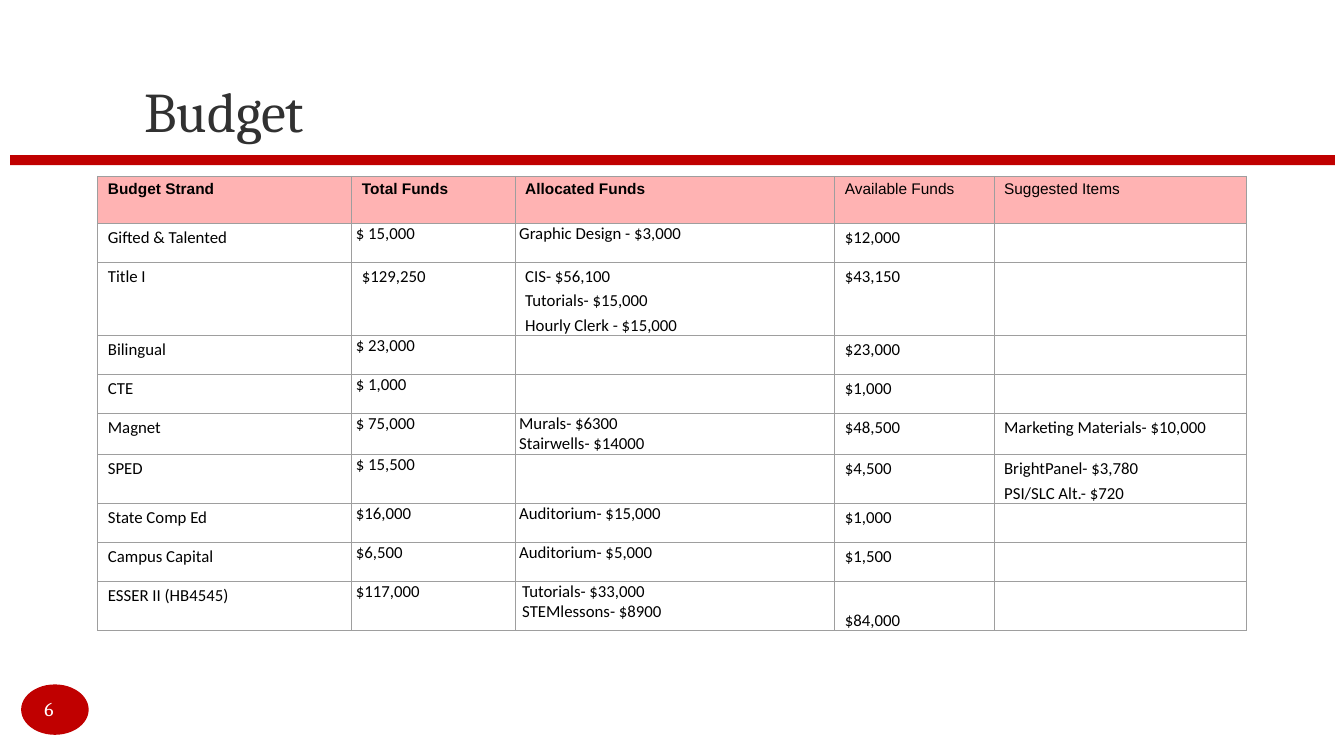
from lxml import etree
from pptx import Presentation
from pptx.dml.color import RGBColor
from pptx.enum.shapes import MSO_SHAPE
from pptx.oxml.ns import qn
from pptx.util import Inches, Pt

RECTANGLE = MSO_SHAPE.RECTANGLE
OVAL = MSO_SHAPE.OVAL

RED = RGBColor(0xC0, 0x00, 0x00)
PINK = RGBColor(0xFF, 0xB3, 0xB3)
WHITE = RGBColor(0xFF, 0xFF, 0xFF)
BLACK = RGBColor(0x00, 0x00, 0x00)
CHARCOAL = RGBColor(0x31, 0x31, 0x31)
GRID_GREY = RGBColor(0x9E, 0x9E, 0x9E)

COLUMN_WIDTHS = [2.52, 1.62, 3.17, 1.58, 2.5]
ROW_HEIGHTS = [0.47, 0.38, 0.73, 0.39, 0.38, 0.41, 0.49, 0.38, 0.39, 0.49]
HEADERS = ["Budget Strand", "Total Funds", "Allocated Funds",
           "Available Funds", "Suggested Items"]
BOLD_HEADERS = 3
BUDGET = [
    ["Gifted & Talented", "$ 15,000", "Graphic Design - $3,000", "$12,000", ""],
    ["Title I", "$129,250",
     "CIS- $56,100\nTutorials- $15,000\nHourly Clerk - $15,000", "$43,150", ""],
    ["Bilingual", "$ 23,000", "", "$23,000", ""],
    ["CTE", "$ 1,000", "", "$1,000", ""],
    ["Magnet", "$ 75,000", "Murals- $6300\nStairwells- $14000", "$48,500",
     "Marketing Materials- $10,000"],
    ["SPED", "$ 15,500", "", "$4,500", "BrightPanel- $3,780\nPSI/SLC Alt.- $720"],
    ["State Comp Ed", "$16,000", "Auditorium- $15,000", "$1,000", ""],
    ["Campus Capital", "$6,500", "Auditorium- $5,000", "$1,500", ""],
    ["ESSER II (HB4545)", "$117,000",
     "Tutorials- $33,000\nSTEMlessons- $8900", "$84,000", ""],
]

# Left and top cell margins
PADDED = (0.1, 0.04)
TIGHT = (0.04, 0)
TIGHT_COLUMNS = (1, 2)
PADDED_ROW = 2
LAST_ROW = len(BUDGET)
SPECIAL_MARGINS = {(LAST_ROW, 2): (0.07, 0), (LAST_ROW, 3): (0.1, 0.29)}


def write_text(frame, text, font, size, color, bold=False, gap=0):
    """Write one paragraph per line, with a gap in points between them."""
    for index, line in enumerate(text.split("\n")):
        para = frame.paragraphs[0] if index == 0 else frame.add_paragraph()
        if index:
            para.space_before = Pt(gap)
        span = para.add_run()
        span.text = line
        span.font.name = font
        span.font.size = Pt(size)
        span.font.bold = bold
        span.font.color.rgb = color


def add_block(page, kind, left, top, width, height):
    block = page.shapes.add_shape(kind, Inches(left), Inches(top),
                                  Inches(width), Inches(height))
    block.shadow.inherit = False
    block.fill.solid()
    block.fill.fore_color.rgb = RED
    block.line.fill.background()


def add_label(page, left, top, width, height, text, **text_format):
    box = page.shapes.add_textbox(Inches(left), Inches(top),
                                  Inches(width), Inches(height))
    frame = box.text_frame
    frame.word_wrap = True
    frame.margin_left = frame.margin_right = 0
    frame.margin_top = frame.margin_bottom = 0
    write_text(frame, text, **text_format)


def set_borders(cell, bottom_width):
    properties = cell._tc.get_or_add_tcPr()
    sides = {"lnL": 0.75, "lnR": 0.75, "lnT": 0.75, "lnB": bottom_width}
    for position, (side, width) in enumerate(sides.items()):
        line = etree.Element(qn(f"a:{side}"), w=str(Pt(width)))
        fill = etree.SubElement(line, qn("a:solidFill"))
        etree.SubElement(fill, qn("a:srgbClr"), val=str(GRID_GREY))
        properties.insert(position, line)


def cell_margins(row, column):
    if (row, column) in SPECIAL_MARGINS:
        return SPECIAL_MARGINS[row, column]
    if column in TIGHT_COLUMNS and row not in (0, PADDED_ROW):
        return TIGHT
    return PADDED


def fill_cell(cell, row, column, text):
    left, top = cell_margins(row, column) if text else (0, 0)
    cell.margin_left, cell.margin_top = Inches(left), Inches(top)
    cell.margin_right = cell.margin_bottom = 0
    cell.fill.solid()
    cell.fill.fore_color.rgb = WHITE if row else PINK
    set_borders(cell, 1 if row == LAST_ROW else 0.75)
    if not text:
        return
    if row == 0:
        write_text(cell.text_frame, text, "Arial", 11, BLACK,
                   bold=column < BOLD_HEADERS)
    else:
        write_text(cell.text_frame, text, "Calibri", 12, BLACK,
                   gap=3.1 if top else 0)


def add_budget_table(page):
    frame = page.shapes.add_table(
        len(ROW_HEIGHTS), len(COLUMN_WIDTHS), Inches(0.97), Inches(1.75),
        Inches(sum(COLUMN_WIDTHS)), Inches(sum(ROW_HEIGHTS)))
    table = frame.table
    table.horz_banding = False
    table.first_row = False
    for column, width in zip(table.columns, COLUMN_WIDTHS):
        column.width = Inches(width)
    for row, height in zip(table.rows, ROW_HEIGHTS):
        row.height = Inches(height)
    for row, texts in enumerate([HEADERS] + BUDGET):
        for column, text in enumerate(texts):
            fill_cell(table.cell(row, column), row, column, text)


def main():
    deck = Presentation()
    deck.slide_width = Inches(13.33)
    deck.slide_height = Inches(7.5)
    page = deck.slides.add_slide(deck.slide_layouts[6])

    # Red rule and page number badge
    add_block(page, RECTANGLE, 0.1, 1.54, 13.14, 0.1)
    add_block(page, OVAL, 0.21, 6.79, 0.67, 0.5)

    # Title and page number
    add_label(page, 1.43, 0.76, 3.06, 0.69, "Budget",
              font="Cambria", size=40, color=CHARCOAL)
    add_label(page, 0.44, 6.91, 0.26, 0.26, "6",
              font="Cambria", size=14, color=WHITE)

    # Budget by strand
    add_budget_table(page)

    deck.save("out.pptx")


if __name__ == "__main__":
    main()
